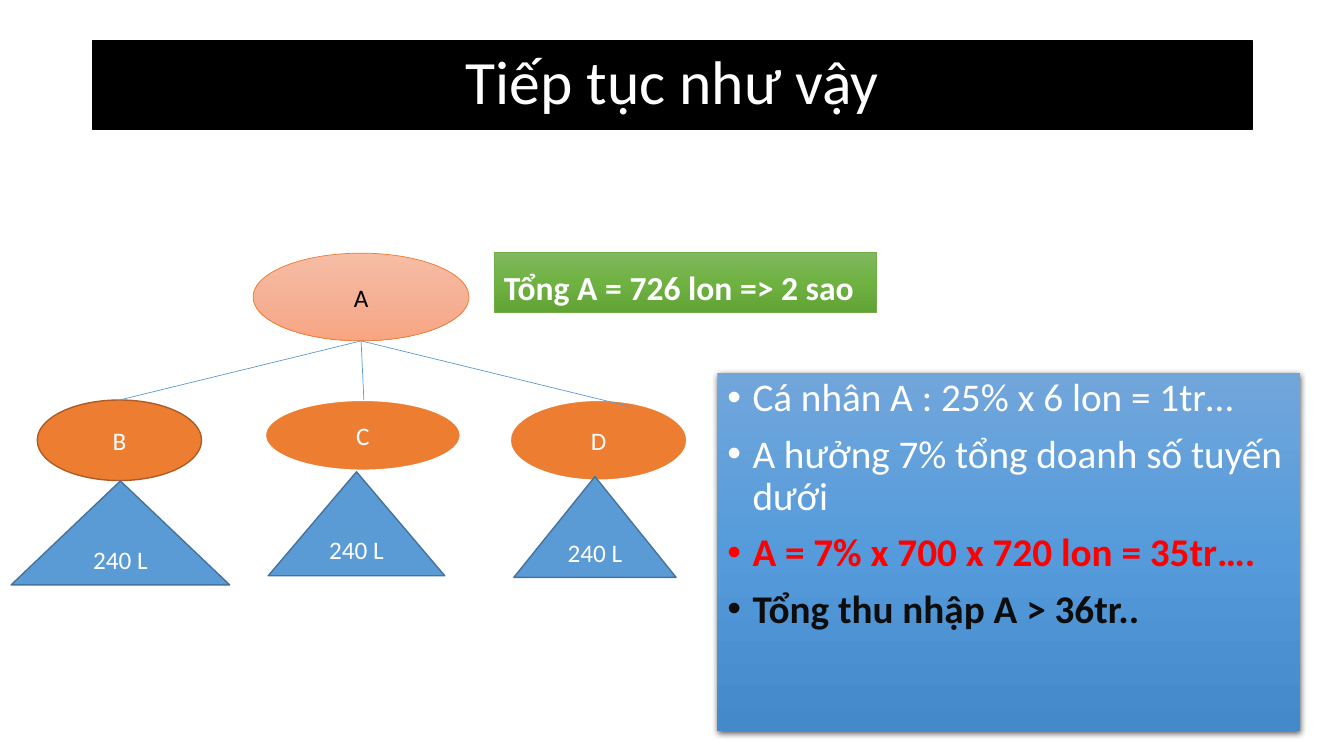
from copy import deepcopy

from lxml.etree import SubElement
from pptx import Presentation
from pptx.dml.color import RGBColor
from pptx.enum.shapes import MSO_CONNECTOR, MSO_SHAPE
from pptx.enum.text import MSO_ANCHOR, PP_ALIGN
from pptx.oxml.ns import qn
from pptx.util import Cm, Pt

FONT = "Calibri"
WHITE = RGBColor(0xFF, 0xFF, 0xFF)
BLACK = RGBColor(0x00, 0x00, 0x00)
RED = RGBColor(0xFF, 0x00, 0x00)
NEAR_BLACK = RGBColor(0x0D, 0x0D, 0x0D)
ORANGE = RGBColor(0xED, 0x7D, 0x31)
DARK_ORANGE = RGBColor(0xAF, 0x5C, 0x24)
BLUE = RGBColor(0x5B, 0x9B, 0xD5)
DARK_BLUE = RGBColor(0x43, 0x73, 0x9E)
GREEN = RGBColor(0x70, 0xAD, 0x47)
PEACH_BLEND = [RGBColor(0xF7, 0xBD, 0xA5), RGBColor(0xF5, 0xB1, 0x96), RGBColor(0xF8, 0xA5, 0x82)]
GREEN_BLEND = [RGBColor(0x81, 0xB8, 0x61), RGBColor(0x6F, 0xB2, 0x42), RGBColor(0x62, 0xA3, 0x36)]
BLUE_BLEND = [RGBColor(0x71, 0xA6, 0xDB), RGBColor(0x55, 0x9B, 0xDB), RGBColor(0x44, 0x8A, 0xCA)]

# Member name, ellipse box, outline, outline width, triangle box, end of the line from A (cm)
BRANCHES = [
    ("C", (6.68, 10.08, 4.93, 1.78), WHITE, 1.5, (6.76, 11.89, 4.45, 2.62), (9.17, 10.08)),
    ("B", (0.94, 10.08, 4.14, 2.03), DARK_ORANGE, 1, (0.28, 12.12, 5.51, 2.62), (3.01, 10.08)),
    ("D", (12.85, 10.08, 4.47, 2.03), WHITE, 1.5, (12.95, 12.01, 4.09, 2.54), (15.85, 10.24)),
]
ROOT_BOTTOM = (9.1, 8.59)
INCOME_LINES = [
    ("Cá nhân A : 25% x 6 lon = 1tr…", WHITE, False),
    ("A hưởng 7% tổng doanh số tuyến dưới", WHITE, False),
    ("A = 7% x 700 x 720 lon = 35tr….", RED, True),
    ("Tổng thu nhập A > 36tr..", NEAR_BLACK, True),
]


def format_paragraph(para, size, color, bold=False, align=PP_ALIGN.LEFT, spacing=None):
    para.alignment = align
    para.line_spacing = spacing
    for span in para.runs:
        span.font.name = FONT
        span.font.size = Pt(size)
        span.font.bold = bold
        span.font.color.rgb = color


def blend(fill, colors):
    """Fill from top to bottom with evenly spaced colours."""
    fill.gradient()
    fill.gradient_angle = 270
    first = fill.gradient_stops[0]
    stop_list = fill._xPr.find(qn("a:gradFill")).find(qn("a:gsLst"))
    while len(stop_list) < len(colors):
        stop_list.append(deepcopy(stop_list[0]))
    for index, (stop, color) in enumerate(zip(fill.gradient_stops, colors)):
        stop.color.rgb = color
        stop.position = index / (len(colors) - 1)


def add_box(slide, kind, place, fill, line=None, width=1):
    """Add a shape; a list of colours as fill makes a gradient."""
    box = slide.shapes.add_shape(kind, *map(Cm, place))
    box.shadow.inherit = False
    if isinstance(fill, list):
        blend(box.fill, fill)
    else:
        box.fill.solid()
        box.fill.fore_color.rgb = fill
    if line is None:
        box.line.fill.background()
    else:
        box.line.color.rgb = line
        box.line.width = Pt(width)
    box.text_frame.word_wrap = True
    return box


def add_node(slide, kind, place, text, color, fill, line, width):
    node = add_box(slide, kind, place, fill, line, width)
    node.text_frame.text = text
    node.text_frame.vertical_anchor = MSO_ANCHOR.MIDDLE
    format_paragraph(node.text_frame.paragraphs[0], 18, color, align=PP_ALIGN.CENTER)


def add_branch_line(slide, start, end):
    line = slide.shapes.add_connector(MSO_CONNECTOR.STRAIGHT, *map(Cm, start + end))
    line.line.color.rgb = BLUE
    line.line.width = Pt(0.5)
    SubElement(line._element.spPr, qn("a:effectLst"))


def add_bullet(para):
    properties = para._p.get_or_add_pPr()
    properties.set("marL", str(Cm(0.635)))
    properties.set("indent", str(-Cm(0.635)))
    SubElement(properties, qn("a:buFont"), typeface="Arial")
    SubElement(properties, qn("a:buChar"), char="•")


def add_soft_shadow(box):
    effects = box._element.spPr.find(qn("a:effectLst"))
    shadow = SubElement(effects, qn("a:outerShdw"), blurRad=str(Pt(4.5)), dist=str(Pt(1.5)),
                        dir="5400000", algn="ctr", rotWithShape="0")
    color = SubElement(shadow, qn("a:srgbClr"), val=str(BLACK))
    SubElement(color, qn("a:alpha"), val="63000")


def format_title(title):
    title.left, title.top, title.width, title.height = map(Cm, (2.34, 1.02, 29.21, 2.24))
    title.fill.solid()
    title.fill.fore_color.rgb = BLACK
    title.line.color.rgb = BLACK
    title.line.width = Pt(1)
    title.text_frame.text = "Tiếp tục như vậy"
    title.text_frame.vertical_anchor = MSO_ANCHOR.MIDDLE
    format_paragraph(title.text_frame.paragraphs[0], 44, WHITE, align=PP_ALIGN.CENTER, spacing=0.9)


def add_total(slide):
    box = add_box(slide, MSO_SHAPE.RECTANGLE, (12.45, 6.35, 9.63, 1.52), GREEN_BLEND, GREEN, 0.5)
    box.text_frame.text = "Tổng A = 726 lon => 2 sao"
    box.text_frame.vertical_anchor = MSO_ANCHOR.BOTTOM
    format_paragraph(box.text_frame.paragraphs[0], 24, WHITE, bold=True, spacing=0.9)


def add_income_list(slide):
    box = add_box(slide, MSO_SHAPE.RECTANGLE, (18.08, 9.4, 14.68, 9.02), BLUE_BLEND)
    add_soft_shadow(box)
    frame = box.text_frame
    frame.vertical_anchor = MSO_ANCHOR.TOP
    frame.text = "\n".join(text for text, _, _ in INCOME_LINES)
    for index, (para, (_, color, bold)) in enumerate(zip(frame.paragraphs, INCOME_LINES)):
        format_paragraph(para, 28, color, bold, spacing=0.9)
        para.space_before = Pt(10 if index else 0)
        add_bullet(para)


def main():
    deck = Presentation()
    deck.slide_width, deck.slide_height = Cm(33.87), Cm(19.05)
    page = deck.slides.add_slide(deck.slide_layouts[5])
    format_title(page.shapes.title)
    add_total(page)
    add_income_list(page)
    add_node(page, MSO_SHAPE.OVAL, (6.38, 6.38, 5.44, 2.21), "A", BLACK, PEACH_BLEND, ORANGE, 0.5)
    for name, place, outline, width, _, _ in BRANCHES:
        add_node(page, MSO_SHAPE.OVAL, place, name, WHITE, ORANGE, outline, width)
    for _, _, _, _, place, line_end in BRANCHES:
        add_node(page, MSO_SHAPE.ISOSCELES_TRIANGLE, place, "240 L", WHITE, BLUE, DARK_BLUE, 1)
        add_branch_line(page, ROOT_BOTTOM, line_end)
    deck.save("out.pptx")


if __name__ == "__main__":
    main()
